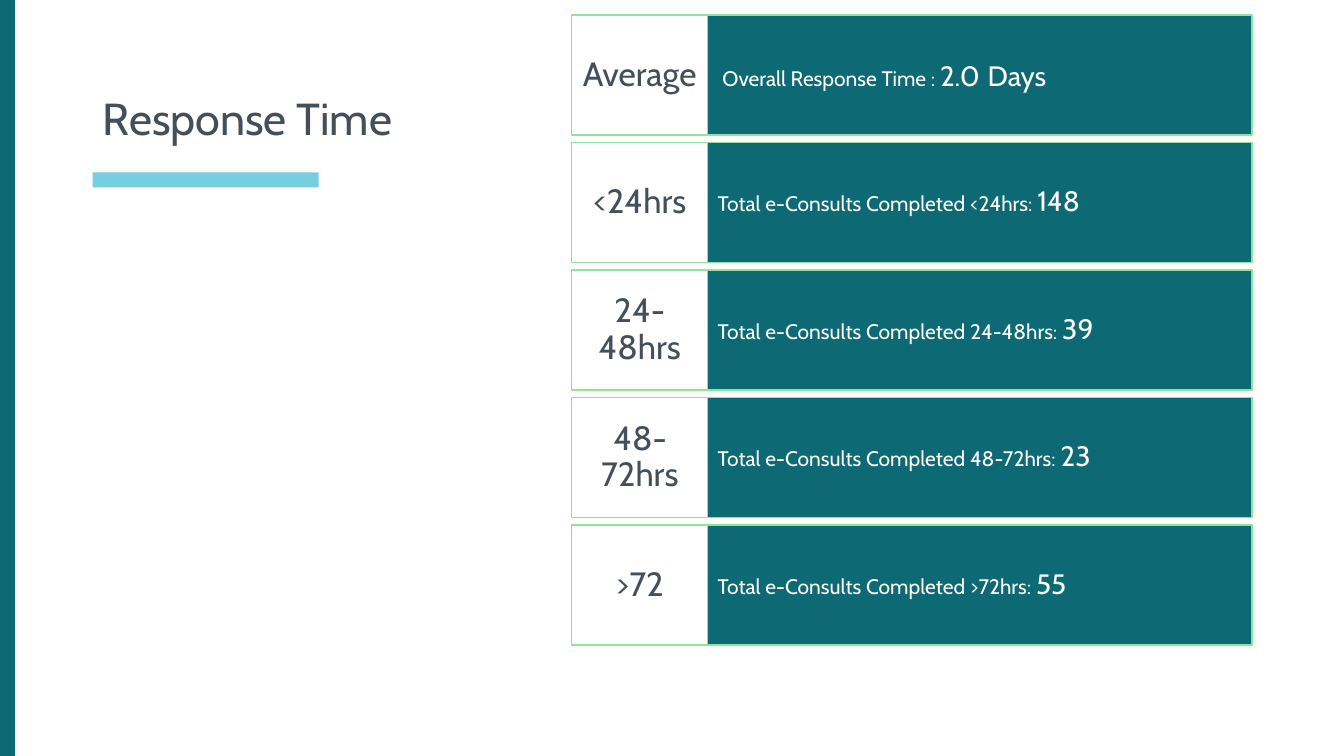
import pptx
import pptx.util
import pptx.dml.color
import pptx.enum.shapes
import pptx.enum.text

Inches = pptx.util.Inches
Align = pptx.enum.text.PP_ALIGN
Anchor = pptx.enum.text.MSO_ANCHOR

# Content: period, then the pieces of its result as (text, size name)
HEADING = "Response Time"
RESPONSE_TIMES = [
    ("Average", [(" Overall Response Time : ", "detail"), ("2.0", "figure"),
                 (" ", "period"), ("Days", "figure")]),
    ("<24hrs", [("Total e-Consults Completed <24hrs: ", "detail"), ("148", "figure")]),
    ("24-48hrs", [("Total e-Consults Completed 24-48hrs: ", "detail"), ("39", "figure")]),
    ("48-72hrs", [("Total e-Consults Completed 48-72hrs: ", "detail"), ("23", "figure")]),
    (">72", [("Total e-Consults Completed >72hrs: ", "detail"), ("55", "figure")]),
]

THEME = {
    "font": "Cabin",
    "colors": {"teal": "0D6974", "sky": "76CEE1", "slate": "454F5B",
               "green": "90E39A", "white": "FFFFFF"},
    "sizes": {"heading": 32, "period": 24, "figure": 20, "detail": 15},
}

# Layout in inches
SLIDE_W, SLIDE_H = 13.33, 7.5
TOP, LAST_TOP, ROW_H = 0.15, 5.21, 1.19
PERIOD_X, PERIOD_W = 5.67, 1.35
RESULT_X, RESULT_W = PERIOD_X + PERIOD_W, 5.4
ROW_PITCH = (LAST_TOP - TOP) / (len(RESPONSE_TIMES) - 1)


def color(name):
    return pptx.dml.color.RGBColor.from_string(THEME["colors"][name])


def set_frame(frame, anchor, margin_x, margin_y):
    values = {
        "word_wrap": True,
        "auto_size": pptx.enum.text.MSO_AUTO_SIZE.NONE,
        "vertical_anchor": anchor,
        "margin_left": Inches(margin_x), "margin_right": Inches(margin_x),
        "margin_top": Inches(margin_y), "margin_bottom": Inches(margin_y),
    }
    for name, value in values.items():
        setattr(frame, name, value)


def write(frame, pieces, ink, alignment):
    line = frame.paragraphs[0]
    line.alignment = alignment
    line.line_spacing = 0.9
    for text, size in pieces:
        run = line.add_run()
        run.text = text
        run.font.name = THEME["font"]
        run.font.size = pptx.util.Pt(THEME["sizes"][size])
        run.font.color.rgb = color(ink)


def add_block(slide, left, top, width, height, fill, outline=None):
    block = slide.shapes.add_shape(
        pptx.enum.shapes.MSO_SHAPE.RECTANGLE,
        Inches(left), Inches(top), Inches(width), Inches(height))
    block.shadow.inherit = False
    block.fill.solid()
    block.fill.fore_color.rgb = color(fill)
    if outline:
        block.line.color.rgb = color(outline)
        block.line.width = pptx.util.Pt(1)
    else:
        block.line.fill.background()
    return block


def main():
    deck = pptx.Presentation()
    deck.slide_width, deck.slide_height = Inches(SLIDE_W), Inches(SLIDE_H)
    slide = deck.slides.add_slide(deck.slide_layouts.get_by_name("Title Only"))

    # Side band and heading underline
    add_block(slide, 0, 0, 0.15, SLIDE_H, "teal")
    add_block(slide, 0.92, 1.71, 2.24, 0.15, "sky")

    # Heading
    heading = slide.shapes.title
    heading.left, heading.top = Inches(0.92), Inches(0.15)
    heading.width, heading.height = Inches(4.3), Inches(1.34)
    set_frame(heading.text_frame, Anchor.BOTTOM, 0.1, 0.05)
    write(heading.text_frame, [(HEADING, "heading")], "slate", Align.LEFT)

    # One row per response period
    for row, (period, result) in enumerate(RESPONSE_TIMES):
        top = TOP + row * ROW_PITCH
        result_block = add_block(slide, RESULT_X, top, RESULT_W, ROW_H, "teal", "green")
        set_frame(result_block.text_frame, Anchor.MIDDLE, 0.1, 0.3)
        write(result_block.text_frame, result, "white", Align.LEFT)

        period_block = add_block(slide, PERIOD_X, top, PERIOD_W, ROW_H, "white", "green")
        set_frame(period_block.text_frame, Anchor.MIDDLE, 0.07, 0.12)
        write(period_block.text_frame, [(period, "period")], "slate", Align.CENTER)

    deck.save("out.pptx")


if __name__ == "__main__":
    main()
